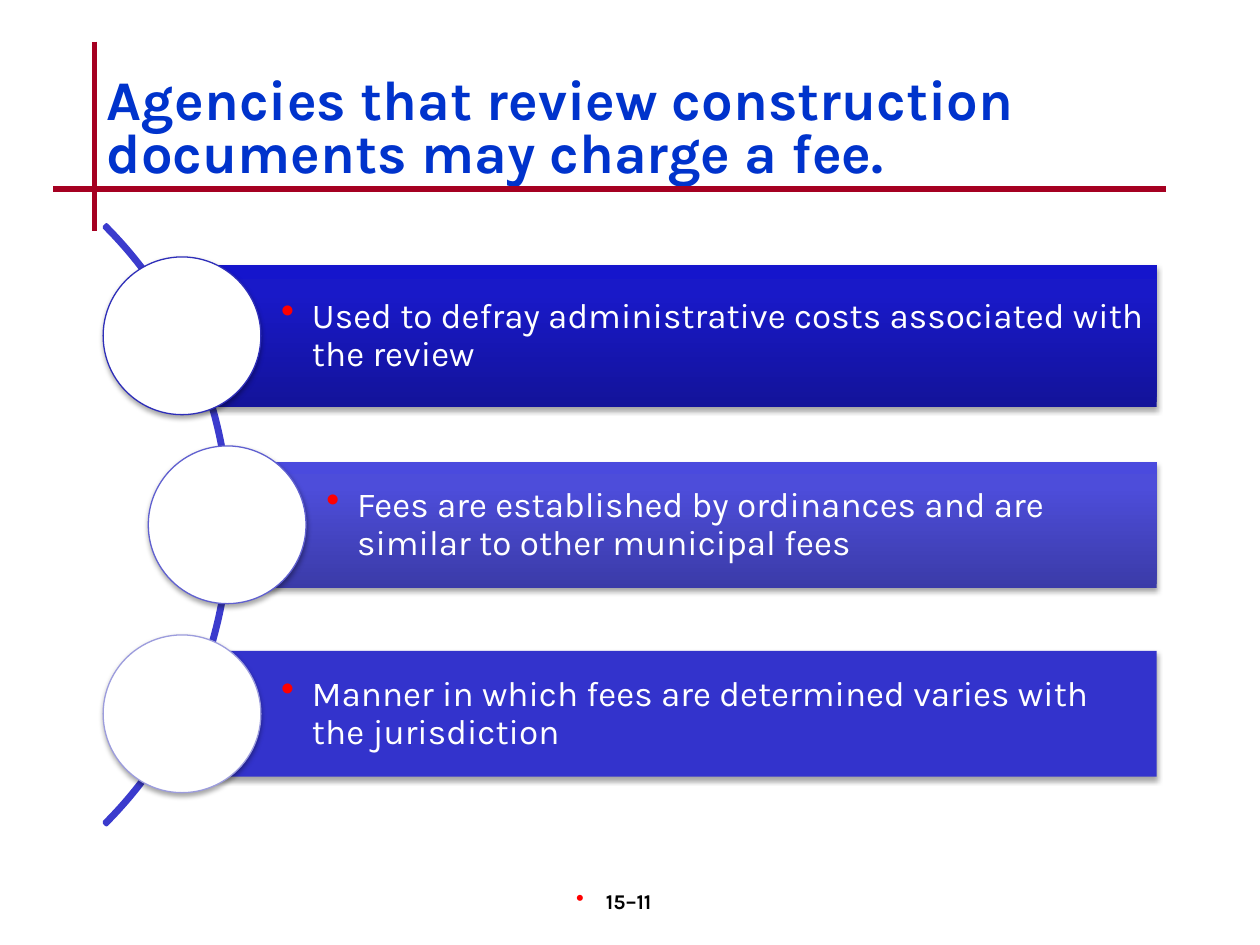
from dataclasses import dataclass

from lxml import etree
from pptx import Presentation
from pptx.dml.color import RGBColor
from pptx.enum.shapes import MSO_CONNECTOR, MSO_SHAPE
from pptx.enum.text import MSO_ANCHOR, MSO_AUTO_SIZE, PP_ALIGN
from pptx.oxml.ns import qn
from pptx.util import Cm, Pt

LINE = MSO_CONNECTOR.STRAIGHT
ARC, BAR, DISC = MSO_SHAPE.BLOCK_ARC, MSO_SHAPE.RECTANGLE, MSO_SHAPE.OVAL
MIDDLE, TOP = MSO_ANCHOR.MIDDLE, MSO_ANCHOR.TOP
LEFT, CENTER = PP_ALIGN.LEFT, PP_ALIGN.CENTER
NO_FIT = MSO_AUTO_SIZE.NONE

FONT = "Karla"
WHITE = RGBColor(0xFF, 0xFF, 0xFF)
BLACK = RGBColor(0x00, 0x00, 0x00)
RED = RGBColor(0xFF, 0x00, 0x00)
WINE = RGBColor(0xA5, 0x00, 0x21)
BLUE = RGBColor(0x00, 0x33, 0xCC)
ROYAL = RGBColor(0x33, 0x33, 0xCC)
CURVE = RGBColor(0x3B, 0x3B, 0xCD)
NAVY = (RGBColor(0x13, 0x13, 0x9A), RGBColor(0x19, 0x19, 0xC8),
        RGBColor(0x15, 0x15, 0xCC))
VIOLET = (RGBColor(0x3B, 0x3B, 0xA8), RGBColor(0x4D, 0x4D, 0xDA),
          RGBColor(0x4A, 0x4A, 0xDE))
RINGS = (RGBColor(0x2E, 0x2E, 0xB9), RGBColor(0x60, 0x60, 0xD0),
         RGBColor(0x9C, 0x9C, 0xDD))
STOPS = (0, 80, 100)

# Lengths in cm
RIGHT = 23.32       # right edge of the bars
MID_Y = 10.58       # centre line of the diagram
PITCH = 3.81        # step between row centres
DISC_SIZE = 3.18
ARC_X, ARC_R = -3.9, 8.55


@dataclass
class Row:
    text: str
    x: float
    height: float
    fills: tuple
    ring: RGBColor


ROWS = (
    Row("Used to defray administrative costs associated with the review",
        3.67, 2.87, NAVY, RINGS[0]),
    Row("Fees are established by ordinances and are similar to other municipal fees",
        4.58, 2.54, VIOLET, RINGS[1]),
    Row("Manner in which fees are determined varies with the jurisdiction",
        3.67, 2.54, (ROYAL,), RINGS[2]),
)


def apply(item, values: dict) -> None:
    for name, value in values.items():
        setattr(item, name, value)


def add_node(parent, tag: str, **attrs):
    return etree.SubElement(parent, qn(tag), attrs)


def add_bullet(para, indent: float) -> None:
    props = para._p.get_or_add_pPr()
    props.set("marL", str(Cm(indent)))
    props.set("indent", str(-Cm(indent)))
    add_node(add_node(props, "a:buClr"), "a:srgbClr", val=str(RED))
    add_node(props, "a:buSzPct", val="110000")
    add_node(props, "a:buChar", char="•")


def write(frame, text: str, size: int, color: RGBColor, bold: bool,
          align, spacing: float, indent: float = 0, **box) -> None:
    apply(frame, {"word_wrap": True, "auto_size": NO_FIT, **box})
    para = frame.paragraphs[0]
    para.text = text
    if indent:
        add_bullet(para, indent)
    apply(para, {"alignment": align, "line_spacing": spacing})
    font = para.runs[0].font
    apply(font, {"name": FONT, "size": Pt(size), "bold": bold})
    font.color.rgb = color


def add_rule(slide, x1: float, y1: float, x2: float, y2: float) -> None:
    rule = slide.shapes.add_connector(LINE, Cm(x1), Cm(y1), Cm(x2), Cm(y2))
    rule.line.color.rgb = WINE
    rule.line.width = Pt(3)
    add_node(rule._element.spPr, "a:effectLst")


def add_shadow(shape) -> None:
    effects = shape._element.spPr.find(qn("a:effectLst"))
    outer = add_node(effects, "a:outerShdw", blurRad=str(Pt(3.1)),
                     dist=str(Pt(1.8)), dir="5400000", rotWithShape="0")
    color = add_node(outer, "a:srgbClr", val=str(BLACK))
    add_node(color, "a:alpha", val="35000")


def paint(fill, colors: tuple) -> None:
    if len(colors) == 1:
        fill.solid()
        fill.fore_color.rgb = colors[0]
        return
    fill.gradient()
    fill.gradient_angle = 90
    stops = fill._xPr.find(qn("a:gradFill")).find(qn("a:gsLst"))
    for old in list(stops):
        stops.remove(old)
    for place, color in zip(STOPS, colors):
        stop = add_node(stops, "a:gs", pos=str(place * 1000))
        add_node(stop, "a:srgbClr", val=str(color))


def add_form(slide, kind, x: float, y: float, width: float, height: float,
             fills: tuple = (), edge: RGBColor | None = None,
             weight: float = 0.75):
    form = slide.shapes.add_shape(kind, Cm(x), Cm(y), Cm(width), Cm(height))
    form.shadow.inherit = False
    if fills:
        paint(form.fill, fills)
        add_shadow(form)
    else:
        form.fill.background()
    if edge is None:
        form.line.fill.background()
    else:
        form.line.color.rgb = edge
        form.line.width = Pt(weight)
    return form


def add_row(slide, row: Row, mid: float) -> None:
    bar = add_form(slide, BAR, row.x, mid - row.height / 2,
                   RIGHT - row.x, row.height, row.fills)
    pad = Cm(0.16)
    write(bar.text_frame, row.text, 20, WHITE, False, LEFT, 0.9, 0.62,
          vertical_anchor=MIDDLE, margin_left=Cm(2), margin_right=pad,
          margin_top=pad, margin_bottom=pad)
    add_form(slide, DISC, row.x - DISC_SIZE / 2, mid - DISC_SIZE / 2,
             DISC_SIZE, DISC_SIZE, (WHITE,), row.ring)


def main() -> None:
    deck = Presentation()
    apply(deck, {"slide_width": Cm(25.4), "slide_height": Cm(19.05)})
    slide = deck.slides.add_slide(deck.slide_layouts[5])

    # Crossed rules and title
    add_rule(slide, 1.9, 0.84, 1.9, 4.65)
    add_rule(slide, 1.07, 3.81, 23.5, 3.81)
    title = slide.shapes.title
    apply(title, {"left": Cm(1.9), "top": Cm(1.37),
                  "width": Cm(21.6), "height": Cm(2.54)})
    write(title.text_frame,
          "Agencies that review construction documents may charge a fee.",
          32, BLUE, True, LEFT, 0.8, vertical_anchor=MIDDLE)

    # Curve behind the rows
    curve = add_form(slide, ARC, ARC_X - ARC_R, MID_Y - ARC_R,
                     2 * ARC_R, 2 * ARC_R, edge=CURVE, weight=2)
    for i, value in enumerate((189, 27, 0.004)):
        curve.adjustments[i] = value

    # Rows of bars and discs
    for i, row in enumerate(ROWS):
        add_row(slide, row, MID_Y + (i - 1) * PITCH)

    # Page number
    page = slide.shapes.add_textbox(Cm(9.96), Cm(17.78), Cm(5.28), Cm(1.27))
    write(page.text_frame, "15–11", 12, BLACK, True, CENTER, 1, 0.6,
          vertical_anchor=TOP, margin_right=Cm(0.7))

    deck.save("out.pptx")


if __name__ == "__main__":
    main()
